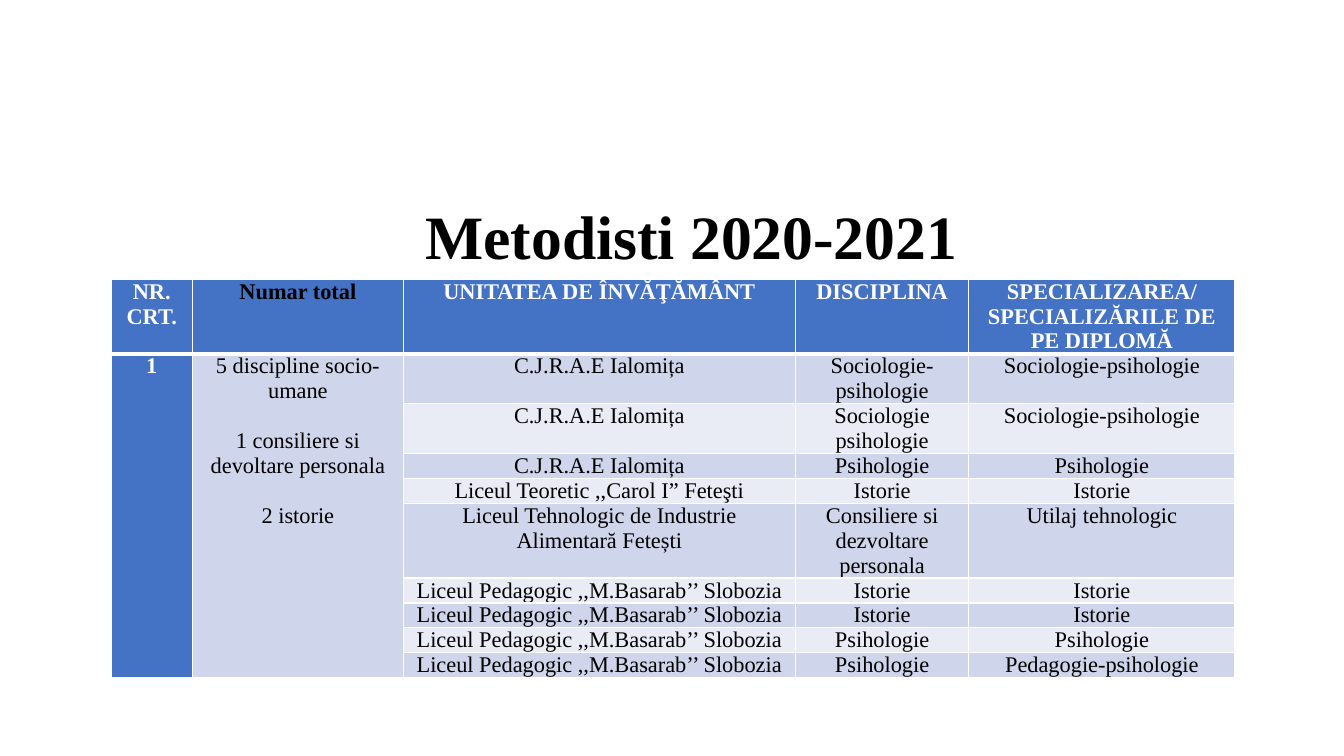
from lxml import etree
from pptx import Presentation
from pptx.dml.color import RGBColor
from pptx.enum import text
from pptx.oxml import ns
from pptx.util import Inches, Pt

TITLE = "Metodisti 2020-2021"
HEADERS = ["NR. CRT.", "Numar total", "UNITATEA DE ÎNVĂŢĂMÂNT", "DISCIPLINA",
           "SPECIALIZAREA/SPECIALIZĂRILE DE PE DIPLOMĂ"]
NUMBER = "1"
TOTALS = "5 discipline socio-umane\n1 consiliere si devoltare personala\n2 istorie"
CJRAE = "C.J.R.A.E Ialomița"
BASARAB = "Liceul Pedagogic ,,M.Basarab’’ Slobozia"
METHODISTS = [
    (CJRAE, "Sociologie-psihologie", "Sociologie-psihologie"),
    (CJRAE, "Sociologie\npsihologie", "Sociologie-psihologie"),
    (CJRAE, "Psihologie", "Psihologie"),
    ("Liceul Teoretic ,,Carol Iˮ Feteşti", "Istorie", "Istorie"),
    ("Liceul Tehnologic de Industrie Alimentară Fetești",
     "Consiliere si dezvoltare personala", "Utilaj tehnologic"),
    (BASARAB, "Istorie", "Istorie"),
    (BASARAB, "Istorie", "Istorie"),
    (BASARAB, "Psihologie", "Psihologie"),
    (BASARAB, "Psihologie", "Pedagogie-psihologie"),
]
COLUMN_WIDTHS = [0.81, 2.09, 3.89, 1.72, 2.64]
ROW_LINES = [3, 2, 2, 1, 1, 3, 1, 1, 1, 1]
LINE_HEIGHT = 0.24

BLACK = RGBColor(0x00, 0x00, 0x00)
WHITE = RGBColor(0xFF, 0xFF, 0xFF)
BLUE = RGBColor(0x44, 0x72, 0xC4)
BANDS = [RGBColor(0xE9, 0xEB, 0xF5), RGBColor(0xCF, 0xD5, 0xEA)]
MARGINS = {"margin_left": Inches(0.07), "margin_right": Inches(0.07),
           "margin_top": 0, "margin_bottom": 0}


def set_font(font, size, color, bold):
    """Apply the slide's typeface with the given size, colour and weight."""
    for name, value in {"name": "Times New Roman", "size": Pt(size), "bold": bold}.items():
        setattr(font, name, value)
    font.color.rgb = color


def set_borders(cell, bottom):
    """Draw white cell borders, with the bottom width given in points."""
    tcPr = cell._tc.get_or_add_tcPr()
    for i, (side, width) in enumerate([("L", 1), ("R", 1), ("T", 1), ("B", bottom)]):
        ln = etree.Element(ns.qn("a:ln" + side), w=str(Pt(width)))
        fill = etree.SubElement(ln, ns.qn("a:solidFill"))
        etree.SubElement(fill, ns.qn("a:srgbClr"), val=str(WHITE))
        tcPr.insert(i, ln)


def fill_cell(cell, wording, row, column):
    """Write and format one table cell."""
    for name, value in MARGINS.items():
        setattr(cell, name, value)
    strong = row == 0 or column == 0
    cell.fill.solid()
    cell.fill.fore_color.rgb = BLUE if strong else BANDS[row % 2]
    set_borders(cell, 3 if row == 0 else 1)
    cell.text_frame.text = wording
    color = WHITE if strong and (row, column) != (0, 1) else BLACK
    for i, p in enumerate(cell.text_frame.paragraphs):
        p.alignment = text.PP_ALIGN.CENTER
        if i and column == 1:
            p.space_before = Pt(18)
        for r in p.runs:
            set_font(r.font, 16, color, strong)


def add_title(s):
    """Place the slide title."""
    sp = s.shapes.title
    box = {"left": 1.11, "top": 1.65, "width": 11.5, "height": 1.45}
    for name, value in box.items():
        setattr(sp, name, Inches(value))
    tf = sp.text_frame
    tf.text = TITLE
    tf.vertical_anchor = text.MSO_ANCHOR.MIDDLE
    p = tf.paragraphs[0]
    p.alignment = text.PP_ALIGN.CENTER
    p.line_spacing = 0.9
    set_font(p.runs[0].font, 44, BLACK, True)


def add_methodists(s):
    """Build the table of methodists."""
    rows = [HEADERS] + [("", "") + row for row in METHODISTS]
    rows[1] = (NUMBER, TOTALS) + METHODISTS[0]
    table = s.shapes.add_table(
        len(rows), len(HEADERS), Inches(1.1), Inches(2.77),
        Inches(sum(COLUMN_WIDTHS)), Inches(LINE_HEIGHT * sum(ROW_LINES))).table
    for column, width in zip(table.columns, COLUMN_WIDTHS):
        column.width = Inches(width)
    for row, lines in zip(table.rows, ROW_LINES):
        row.height = Inches(LINE_HEIGHT * lines)
    for i, row in enumerate(rows):
        for j, wording in enumerate(row):
            fill_cell(table.cell(i, j), wording, i, j)
    for j in range(2):
        table.cell(1, j).merge(table.cell(len(rows) - 1, j))


def main():
    """Build and save the slide."""
    prs = Presentation()
    prs.slide_width, prs.slide_height = Inches(13.33), Inches(7.5)
    s = prs.slides.add_slide(prs.slide_layouts[5])
    add_title(s)
    add_methodists(s)
    prs.save("out.pptx")


if __name__ == "__main__":
    main()
